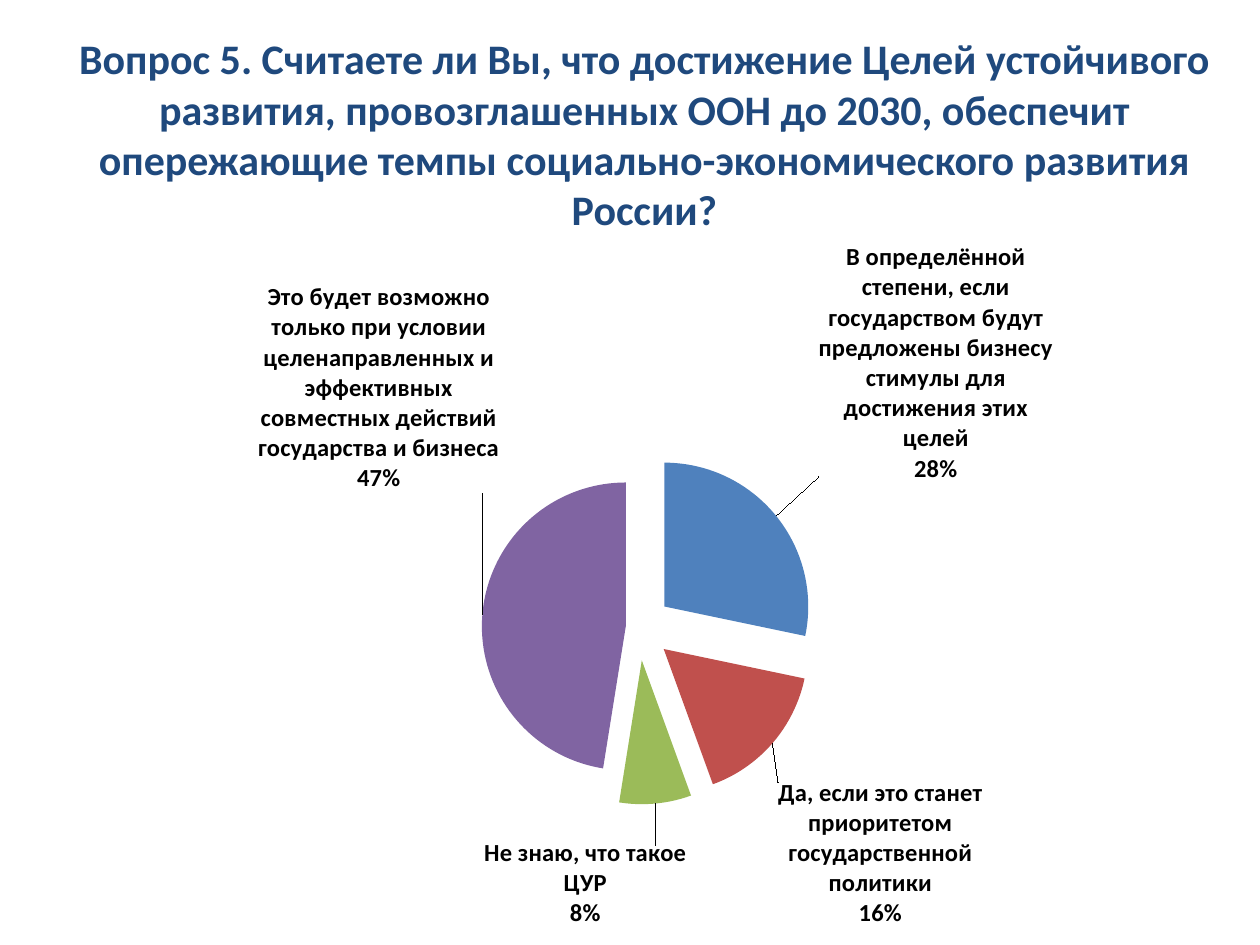
from lxml import etree
from pptx import Presentation
from pptx.chart.data import CategoryChartData
from pptx.dml.color import RGBColor
from pptx.enum.chart import XL_CHART_TYPE
from pptx.enum.text import MSO_AUTO_SIZE, PP_ALIGN
from pptx.oxml import parse_xml
from pptx.util import Inches, Pt

PIE = XL_CHART_TYPE.PIE
CENTER = PP_ALIGN.CENTER
FIT_SHAPE = MSO_AUTO_SIZE.SHAPE_TO_FIT_TEXT
CHART_NS = "http://schemas.openxmlformats.org/drawingml/2006/chart"
DRAWING_NS = "http://schemas.openxmlformats.org/drawingml/2006/main"

FONT = "Calibri"
COLORS = {
    "title": "1F497D", "text": "000000",
    "blue": "4F81BD", "red": "C0504D", "green": "9BBB59", "purple": "8064A2",
}
TITLE = (
    "Вопрос 5. Считаете ли Вы, что достижение Целей устойчивого развития, "
    "провозглашенных ООН до 2030, обеспечит опережающие темпы "
    "социально-экономического развития России?"
)
# answer, percent, color, explosion, label shift as a share of chart width and height
ANSWERS = [
    ("В определённой степени, если государством будут предложены бизнесу "
     "стимулы для достижения этих целей", 28, "blue", 23, (0.03, -0.05)),
    ("Да, если это станет приоритетом государственной политики",
     16, "red", 23, (0, 0.05)),
    ("Не знаю, что такое ЦУР", 8, "green", 23, (-0.14, 0.05)),
    ("Это будет возможно только при условии целенаправленных и эффективных "
     "совместных действий государства и бизнеса", 47, "purple", 9, (0.02, -0.33)),
]
CHART_BOX = (0.12, 1.92, 9.76, 5.45)
PIE_CENTER = (5.07, 4.98)
PIE_SIZE = 2.81

LABEL_CONTENT = (
    '<c:dLblPos val="outEnd"/><c:showLegendKey val="0"/><c:showVal val="0"/>'
    '<c:showCatName val="1"/><c:showSerName val="0"/><c:showPercent val="1"/>'
    '<c:showBubbleSize val="0"/><c:separator>\n</c:separator>'
)


def rgb(name):
    return RGBColor.from_string(COLORS[name])


def chart_xml(text):
    """Parse one chart element, declaring the namespaces on it."""
    tag_end = min(text.index(mark) for mark in (" ", ">", "/") if mark in text)
    names = f' xmlns:c="{CHART_NS}" xmlns:a="{DRAWING_NS}"'
    return parse_xml(text[:tag_end] + names + text[tag_end:])


def explosion(percent):
    return chart_xml(f'<c:explosion val="{percent}"/>')


def add_title(slide):
    box = slide.shapes.add_textbox(
        Inches(0.35), Inches(0.21), Inches(9.53), Inches(1.72))
    frame = box.text_frame
    frame.word_wrap = True
    frame.auto_size = FIT_SHAPE
    paragraph = frame.paragraphs[0]
    paragraph.text = TITLE
    paragraph.alignment = CENTER
    font = paragraph.font
    font.name, font.size, font.bold = FONT, Pt(24), True
    font.color.rgb = rgb("title")


def place_pie(chart):
    """Fix the plot area so that the pie keeps its center and size."""
    left, top, width, height = CHART_BOX
    shares = {
        "x": (PIE_CENTER[0] - PIE_SIZE / 2 - left) / width,
        "y": (PIE_CENTER[1] - PIE_SIZE / 2 - top) / height,
        "w": PIE_SIZE / width,
        "h": PIE_SIZE / height,
    }
    values = "".join(f'<c:{key} val="{share:.4f}"/>' for key, share in shares.items())
    plot_area = chart._chartSpace.chart.plotArea
    for old_layout in plot_area.findall(f"{{{CHART_NS}}}layout"):
        plot_area.remove(old_layout)
    plot_area.insert(0, chart_xml(
        '<c:layout><c:manualLayout><c:layoutTarget val="inner"/>'
        '<c:xMode val="edge"/><c:yMode val="edge"/>'
        f"{values}</c:manualLayout></c:layout>"))


def add_labels(series):
    labels = "".join(
        f'<c:dLbl><c:idx val="{index}"/><c:layout><c:manualLayout>'
        f'<c:x val="{x}"/><c:y val="{y}"/></c:manualLayout></c:layout>'
        f"{LABEL_CONTENT}</c:dLbl>"
        for index, (*_, (x, y)) in enumerate(ANSWERS))
    text_style = (
        '<c:txPr><a:bodyPr/><a:p><a:pPr><a:defRPr sz="1400" b="1"><a:solidFill>'
        f'<a:srgbClr val="{COLORS["text"]}"/></a:solidFill>'
        f'<a:latin typeface="{FONT}"/></a:defRPr></a:pPr>'
        '<a:endParaRPr lang="ru-RU"/></a:p></c:txPr>')
    labels = labels.replace("<c:dLblPos", text_style + "<c:dLblPos")
    categories = series._element.find(f"{{{CHART_NS}}}cat")
    categories.addprevious(chart_xml(
        f"<c:dLbls>{labels}{text_style}{LABEL_CONTENT}"
        '<c:showLeaderLines val="1"/></c:dLbls>'))


def add_pie(slide):
    data = CategoryChartData()
    data.categories = [answer[0] for answer in ANSWERS]
    data.add_series("Series 1", [answer[1] for answer in ANSWERS])
    frame = slide.shapes.add_chart(PIE, *map(Inches, CHART_BOX), data)
    chart = frame.chart
    chart.has_title = False
    chart.has_legend = False
    chart.font.name, chart.font.size = FONT, Pt(10)
    chart.font.color.rgb = rgb("text")
    plot = chart.plots[0]
    plot.vary_by_categories = True
    series = plot.series[0]
    for index, (_, _, color, distance, _) in enumerate(ANSWERS):
        fill = series.points[index].format.fill
        fill.solid()
        fill.fore_color.rgb = rgb(color)
    slices = series._element.findall(f"{{{CHART_NS}}}dPt")
    slices[0].addprevious(explosion(ANSWERS[0][3]))
    for pie_slice, answer in zip(slices, ANSWERS):
        style = pie_slice.find(f"{{{CHART_NS}}}spPr")
        style.addprevious(explosion(answer[3]))
    add_labels(series)
    place_pie(chart)
    etree.cleanup_namespaces(series._element)


def main():
    presentation = Presentation()
    presentation.slide_width, presentation.slide_height = Inches(10), Inches(7.5)
    slide = presentation.slides.add_slide(presentation.slide_layouts[6])
    add_title(slide)
    add_pie(slide)
    presentation.save("out.pptx")


if __name__ == "__main__":
    main()
